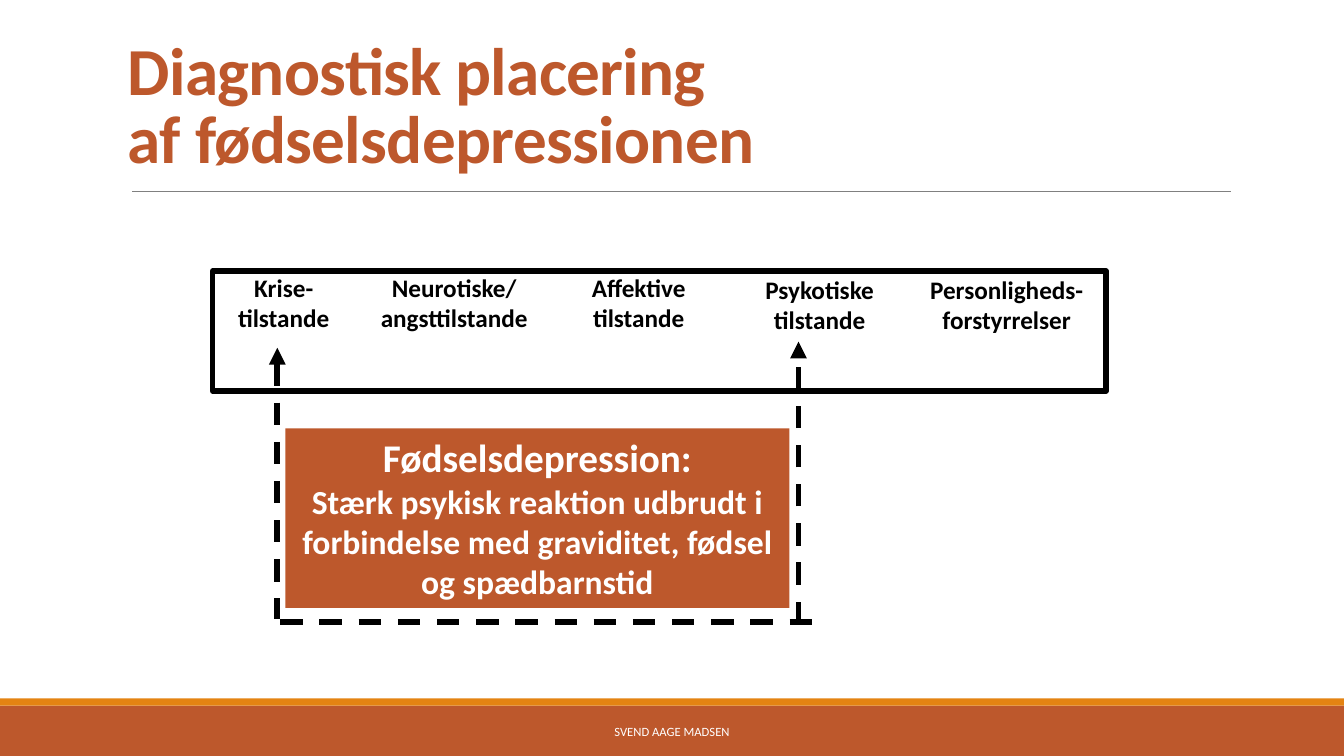
from dataclasses import dataclass

from lxml import etree
from pptx import Presentation
from pptx.dml.color import RGBColor
from pptx.enum.dml import MSO_LINE
from pptx.enum.shapes import MSO_CONNECTOR, MSO_SHAPE
from pptx.enum.text import MSO_ANCHOR, PP_ALIGN
from pptx.oxml.ns import qn
from pptx.util import Inches, Pt

RECTANGLE = MSO_SHAPE.RECTANGLE
STRAIGHT = MSO_CONNECTOR.STRAIGHT
DASH = MSO_LINE.DASH
LEFT, CENTER = PP_ALIGN.LEFT, PP_ALIGN.CENTER
TOP, MIDDLE, BOTTOM = MSO_ANCHOR.TOP, MSO_ANCHOR.MIDDLE, MSO_ANCHOR.BOTTOM


@dataclass(frozen=True)
class Theme:
    font: str = "Calibri"
    rust: str = "BD582C"
    orange: str = "E48312"
    gray: str = "808080"
    black: str = "000000"
    white: str = "FFFFFF"
    title_size: int = 48
    heading_size: int = 28
    body_size: int = 24
    label_size: int = 18
    footer_size: int = 9
    heavy_line: float = 4
    thin_line: float = 0.5


THEME = Theme()

# Text, left, top, width
CONDITIONS = [
    ("Krise-\ntilstande", 2.23, 2.65, 1.17),
    ("Neurotiske/\nangsttilstande", 3.67, 2.65, 1.67),
    ("Affektive\ntilstande", 5.76, 2.65, 1.15),
    ("Psykotiske\ntilstande", 7.46, 2.67, 1.34),
    ("Personligheds-\nforstyrrelser", 9.12, 2.67, 1.73),
]


def color(code):
    return RGBColor.from_string(code)


def write(shape, text, sizes, ink, bold=True, align=CENTER, anchor=TOP, wrap=True):
    """Fill a shape with text; sizes holds one type size per paragraph."""
    frame = shape.text_frame
    frame.text = text
    frame.word_wrap = wrap
    frame.vertical_anchor = anchor
    for para, size in zip(frame.paragraphs, sizes):
        para.alignment = align
        for span in para.runs:
            span.font.name = THEME.font
            span.font.size = Pt(size)
            span.font.bold = bold
            span.font.color.rgb = color(ink)
    return frame


def add_text(page, place, text, sizes, ink, **style):
    box = page.shapes.add_textbox(*map(Inches, place))
    return write(box, text, sizes, ink, **style)


def add_box(page, place, fill, outline=None):
    box = page.shapes.add_shape(RECTANGLE, *map(Inches, place))
    box.shadow.inherit = False
    box.fill.solid()
    box.fill.fore_color.rgb = color(fill)
    if outline:
        box.line.color.rgb = color(outline)
        box.line.width = Pt(THEME.heavy_line)
    else:
        box.line.fill.background()
    return box


def add_line(page, start, end, ink, width, dashed=False, arrow=None):
    """Draw a line; arrow is headEnd (at start) or tailEnd (at end)."""
    line = page.shapes.add_connector(STRAIGHT, *map(Inches, start + end))
    line.line.color.rgb = color(ink)
    line.line.width = Pt(width)
    if dashed:
        line.line.dash_style = DASH
    if arrow:
        outline = line.line._get_or_add_ln()
        etree.SubElement(outline, qn(f"a:{arrow}"), type="triangle")
    etree.SubElement(line._element.spPr, qn("a:effectLst"))


def add_title(page):
    frame = add_text(page, (1.17, 0.57, 8.49, 1.24),
                     "Diagnostisk placering\vaf fødselsdepressionen",
                     [THEME.title_size], THEME.rust, align=LEFT, anchor=BOTTOM)
    para = frame.paragraphs[0]
    para.line_spacing = 0.85
    for span in para.runs:
        span.font._element.set("spc", "-50")
    add_line(page, (1.31, 1.9), (12.21, 1.9), THEME.gray, THEME.thin_line)


def add_conditions(page):
    add_box(page, (2.11, 2.69, 8.86, 1.19), THEME.white, THEME.black)
    for text, left, top, width in CONDITIONS:
        add_text(page, (left, top, width, 0.7), text,
                 [THEME.label_size] * 2, THEME.black, wrap=False)


def add_depression(page):
    for start, end, arrow in [
        ((2.75, 3.45), (2.75, 6.14), "headEnd"),
        ((2.78, 6.17), (8.06, 6.17), None),
        ((7.92, 6.19), (7.92, 3.39), "tailEnd"),
    ]:
        add_line(page, start, end, THEME.black, THEME.heavy_line, True, arrow)
    box = add_box(page, (2.83, 4.25, 5, 1.78), THEME.rust)
    write(box, "Fødselsdepression:\nStærk psykisk reaktion udbrudt i "
          "forbindelse med graviditet, fødsel og spædbarnstid",
          [THEME.heading_size, THEME.body_size], THEME.white)


def add_footer(page):
    add_box(page, (0, 7, 13.33, 0.5), THEME.rust)
    add_box(page, (0, 6.93, 13.33, 0.07), THEME.orange)
    add_text(page, (4.03, 7.06, 5.27, 0.4), "SVEND AAGE MADSEN",
             [THEME.footer_size], THEME.white, bold=False, anchor=MIDDLE)


def main():
    deck = Presentation()
    deck.slide_width, deck.slide_height = Inches(13.33), Inches(7.5)
    page = deck.slides.add_slide(deck.slide_layouts[6])
    add_footer(page)
    add_title(page)
    add_conditions(page)
    add_depression(page)
    deck.save("out.pptx")


if __name__ == "__main__":
    main()
